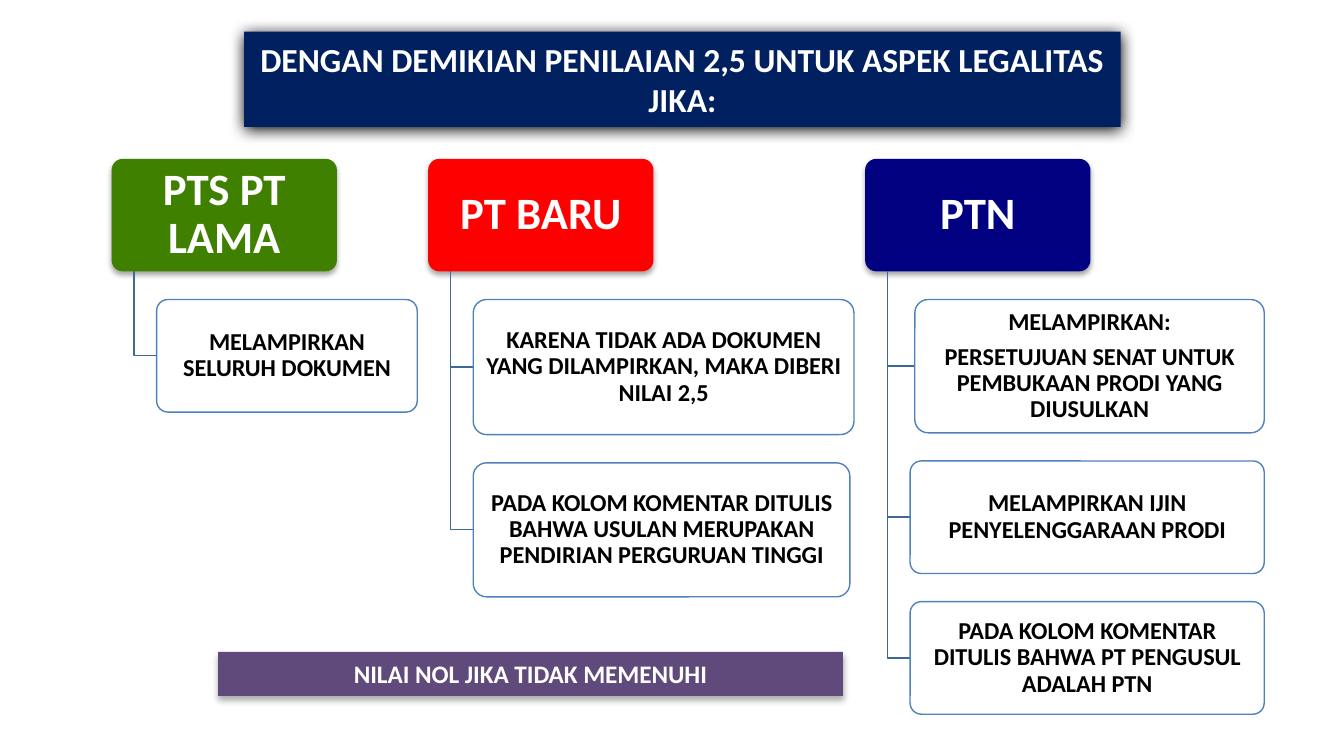
from lxml import etree
from pptx import Presentation
from pptx.dml.color import RGBColor
from pptx.enum.shapes import MSO_SHAPE
from pptx.enum.text import MSO_ANCHOR, PP_ALIGN
from pptx.oxml.ns import qn
from pptx.util import Pt

RECT, ROUND = MSO_SHAPE.RECTANGLE, MSO_SHAPE.ROUNDED_RECTANGLE
CENTER, MIDDLE = PP_ALIGN.CENTER, MSO_ANCHOR.MIDDLE

WHITE = RGBColor(0xFF, 0xFF, 0xFF)
BLACK = RGBColor(0, 0, 0)
NAVY = RGBColor(0x00, 0x20, 0x60)
PURPLE = RGBColor(0x60, 0x4A, 0x7B)
GREEN = RGBColor(0x40, 0x80, 0x00)
RED = RGBColor(0xFF, 0x00, 0x00)
BLUE = RGBColor(0x00, 0x00, 0x80)
BORDER = RGBColor(0x4F, 0x81, 0xBD)
BRANCH = RGBColor(0x3F, 0x67, 0x97)

FONT = "Calibri"
HEAD_W, HEAD_H = 120.7, 60.3
GAP = HEAD_H / 4            # vertical gap between boxes of a column
TRUNK = HEAD_W / 10         # distance of the trunk from the head's left edge

# (left, colour, heading, [(indent, width, height, paragraphs), ...])
COLUMNS = [
    (59.8, GREEN, "PTS PT LAMA", [
        (24.1, 139.6, 60.3, ["MELAMPIRKAN SELURUH DOKUMEN"])]),
    (229.4, RED, "PT BARU", [
        (24.1, 204, 72.4, ["KARENA TIDAK ADA DOKUMEN YANG DILAMPIRKAN, "
                           "MAKA DIBERI NILAI 2,5"]),
        (24.1, 201.8, 71.8, ["PADA KOLOM KOMENTAR DITULIS BAHWA USULAN "
                             "MERUPAKAN PENDIRIAN PERGURUAN TINGGI"])]),
    (463.5, BLUE, "PTN", [
        (26.6, 187.2, 71.4, ["MELAMPIRKAN:",
                             "PERSETUJUAN SENAT UNTUK PEMBUKAAN PRODI YANG DIUSULKAN"]),
        (24.1, 189.7, 60.3, ["MELAMPIRKAN IJIN PENYELENGGARAAN PRODI"]),
        (24.1, 189.7, 60.3, ["PADA KOLOM KOMENTAR DITULIS BAHWA PT PENGUSUL "
                             "ADALAH PTN"])]),
]


def add_shadow(s, opacity, blur, dist):
    """Give a shape a black shadow falling straight down."""
    effects = s._element.spPr.find(qn("a:effectLst"))
    shadow = etree.SubElement(
        effects, qn("a:outerShdw"), blurRad=str(Pt(blur)), dist=str(Pt(dist)),
        dir="5400000", algn="ctr", rotWithShape="0")
    color = etree.SubElement(shadow, qn("a:srgbClr"), val="000000")
    etree.SubElement(color, qn("a:alpha"), val=str(opacity * 1000))


def add_box(slide, kind, box, fill):
    s = slide.shapes.add_shape(kind, *[Pt(v) for v in box])
    s.shadow.inherit = False
    s.fill.solid()
    s.fill.fore_color.rgb = fill
    s.line.fill.background()
    if kind == ROUND:
        s.adjustments[0] = 0.1
    return s


def write(s, paragraphs, size, color, inset, spacing=1.0):
    """Centre bold paragraphs in a shape; inset is (horizontal, vertical)."""
    tf = s.text_frame
    tf.word_wrap = True
    tf.vertical_anchor = MIDDLE
    tf.margin_left = tf.margin_right = Pt(inset[0])
    tf.margin_top = tf.margin_bottom = Pt(inset[1])
    tf.text = "\n".join(paragraphs)
    for p in tf.paragraphs:
        p.alignment = CENTER
        p.line_spacing = spacing
        font = p.runs[0].font
        font.name, font.size, font.bold = FONT, Pt(size), True
        font.color.rgb = color
    for p in tf.paragraphs[:-1]:
        p.space_after = Pt(4.5)


def add_banner(slide, box, fill, text, size, shadow):
    s = add_box(slide, RECT, box, fill)
    add_shadow(s, *shadow)
    write(s, [text], size, WHITE, (7.2, 3.6))


def add_branch(slide, x, top, bottom, right):
    """Draw the elbow from a column's trunk to the side of an item."""
    builder = slide.shapes.build_freeform(Pt(x), Pt(top))
    builder.add_line_segments([(Pt(x), Pt(bottom)), (Pt(right), Pt(bottom))],
                              close=False)
    s = builder.convert_to_shape()
    s.shadow.inherit = False
    s.fill.background()
    s.line.color.rgb = BRANCH
    s.line.width = Pt(0.75)


def add_column(slide, left, top, color, heading, items):
    # Heading
    head = add_box(slide, ROUND, (left, top, HEAD_W, HEAD_H), color)
    add_shadow(head, 35, 3.1, 1.8)
    write(head, [heading], 24, WHITE, (3.6, 2.4), 0.9)

    # Items, stacked below and joined to the trunk
    head_bottom = top + HEAD_H
    y = head_bottom + GAP
    for indent, width, height, paragraphs in items:
        x = left + indent
        add_branch(slide, left + TRUNK, head_bottom, y + height / 2, x)
        item = add_box(slide, ROUND, (x, y, width, height), WHITE)
        item.line.color.rgb = BORDER
        item.line.width = Pt(0.75)
        write(item, paragraphs, 13, BLACK, (2.4, 1.6), 0.9)
        y += height + GAP


def main():
    prs = Presentation()
    prs.slide_width, prs.slide_height = Pt(720), Pt(405)
    slide = prs.slides.add_slide(prs.slide_layouts[6])

    # Title
    add_banner(slide, (130.8, 17, 469.6, 51), NAVY,
               "DENGAN DEMIKIAN PENILAIAN 2,5 UNTUK ASPEK LEGALITAS JIKA:",
               18, (100, 8.5, 1))

    # Three columns
    for left, color, heading, items in COLUMNS:
        add_column(slide, left, 85.1, color, heading, items)

    # Closing note
    add_banner(slide, (116.8, 349.2, 334.8, 23.6), PURPLE,
               "NILAI NOL JIKA TIDAK MEMENUHI", 13.5, (32, 3.5, 2.2))

    prs.save("out.pptx")


if __name__ == "__main__":
    main()
